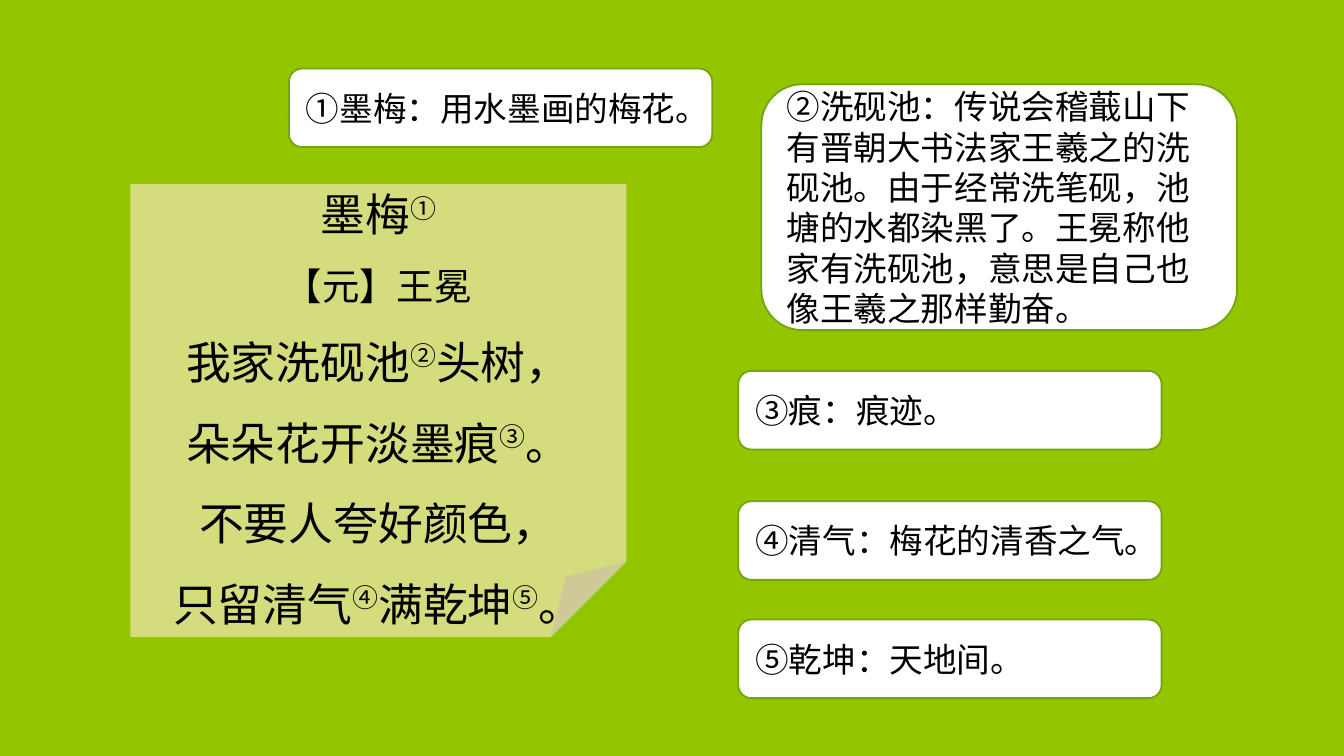
"""Build a slide with an annotated classical poem on a green ground."""
from dataclasses import dataclass

import pptx
import pptx.dml.color
import pptx.enum.shapes
import pptx.enum.text
import pptx.oxml
import pptx.oxml.ns
import pptx.util

RGBColor = pptx.dml.color.RGBColor
Shape = pptx.enum.shapes.MSO_SHAPE
Anchor = pptx.enum.text.MSO_ANCHOR
Align = pptx.enum.text.PP_ALIGN

GREEN = RGBColor(0x94, 0xC6, 0x00)
DARK_GREEN = RGBColor(0x74, 0xA5, 0x10)
CREAM = RGBColor(0xFF, 0xEC, 0xD3)
WHITE = RGBColor(0xFF, 0xFF, 0xFF)
BLACK = RGBColor(0x00, 0x00, 0x00)

WIDTH = pptx.util.Inches(10)
HEIGHT = pptx.util.Inches(5.625)
COLUMN = WIDTH / 100
ROW = HEIGHT / 100
MARKS = "①②③④⑤"
NOTE_COLUMN = 54.93


@dataclass(frozen=True)
class Verse:
    """One centred line of the poem."""

    text: str
    size: int = 24
    spacing: float = 1.5


@dataclass(frozen=True)
class Note:
    """One explanation, placed in grid columns and rows."""

    text: str
    row: float
    column: float = NOTE_COLUMN
    columns: float = 31.5
    rows: float = 10.4


POEM = (
    Verse("墨梅①", spacing=1.0),
    Verse("【元】王冕", 20),
    Verse("我家洗砚池②头树，"),
    Verse("朵朵花开淡墨痕③。"),
    Verse("不要人夸好颜色，"),
    Verse("只留清气④满乾坤⑤。"),
)

NOTES = (
    Note("①墨梅：用水墨画的梅花。", 9.07, column=21.5),
    Note(
        "②洗砚池：传说会稽蕺山下有晋朝大书法家王羲之的洗砚池。"
        "由于经常洗笔砚，池塘的水都染黑了。"
        "王冕称他家有洗砚池，意思是自己也像王羲之那样勤奋。",
        11.15, column=56.65, columns=35.4, rows=32.53,
    ),
    Note("③痕：痕迹。", 49.07),
    Note("④清气：梅花的清香之气。", 66.31),
    Note("⑤乾坤：天地间。", 81.96),
)


def apply_format(target, values: dict) -> None:
    """Set every attribute in values on the target."""
    for attribute, value in values.items():
        setattr(target, attribute, value)


def add_panel(slide, kind, column: float, row: float, columns: float, rows: float, fill):
    """Add a filled shape without shadow at a grid position."""
    panel = slide.shapes.add_shape(
        kind, round(column * COLUMN), round(row * ROW),
        round(columns * COLUMN), round(rows * ROW),
    )
    panel.shadow.inherit = False
    panel.fill.solid()
    panel.fill.fore_color.rgb = fill
    return panel


def add_text(paragraph, text: str, size: int, font: str):
    """Add a black run and return it."""
    run = paragraph.add_run()
    run.text = text
    apply_format(run.font, {"size": pptx.util.Pt(size), "name": font})
    run.font.color.rgb = BLACK
    return run


def split_marks(text: str) -> list[str]:
    """Split a verse into plain pieces and note marks."""
    for mark in MARKS:
        text = text.replace(mark, f"|{mark}|")
    return [piece for piece in text.split("|") if piece]


def add_poem(slide, verses: tuple[Verse, ...]) -> None:
    """Draw the translucent sheet with the poem."""
    sheet = add_panel(slide, Shape.FOLDED_CORNER, 9.7, 24.36, 36.9, 59.91, CREAM)
    sheet.line.fill.background()
    colour = sheet.fill._xPr.find(".//" + pptx.oxml.ns.qn("a:srgbClr"))
    alpha = pptx.oxml.parse_xml(f'<a:alpha {pptx.oxml.ns.nsdecls("a")} val="60000"/>')
    colour.append(alpha)
    frame = sheet.text_frame
    apply_format(frame, {
        "word_wrap": True,
        "vertical_anchor": Anchor.TOP,
        "margin_top": pptx.util.Inches(0.02),
    })
    for index, verse in enumerate(verses):
        paragraph = frame.add_paragraph() if index else frame.paragraphs[0]
        apply_format(paragraph, {"alignment": Align.CENTER, "line_spacing": verse.spacing})
        for piece in split_marks(verse.text):
            run = add_text(paragraph, piece, verse.size, "Noto Sans CJK SC")
            if piece in MARKS:
                run.font._element.set("baseline", "30000")


def add_note(slide, note: Note) -> None:
    """Draw one rounded white explanation box."""
    box = add_panel(
        slide, Shape.ROUNDED_RECTANGLE,
        note.column, note.row, note.columns, note.rows, WHITE,
    )
    box.line.color.rgb = DARK_GREEN
    box.line.width = pptx.util.Pt(1)
    frame = box.text_frame
    apply_format(frame, {"word_wrap": True, "vertical_anchor": Anchor.MIDDLE})
    paragraph = frame.paragraphs[0]
    paragraph.alignment = Align.LEFT
    add_text(paragraph, note.text, 18, "Calibri")


def main() -> None:
    """Build and save the slide."""
    presentation = pptx.Presentation()
    apply_format(presentation, {"slide_width": WIDTH, "slide_height": HEIGHT})
    slide = presentation.slides.add_slide(presentation.slide_layouts[6])
    slide.background.fill.solid()
    slide.background.fill.fore_color.rgb = GREEN
    add_poem(slide, POEM)
    for note in NOTES:
        add_note(slide, note)
    presentation.save("out.pptx")


if __name__ == "__main__":
    main()
